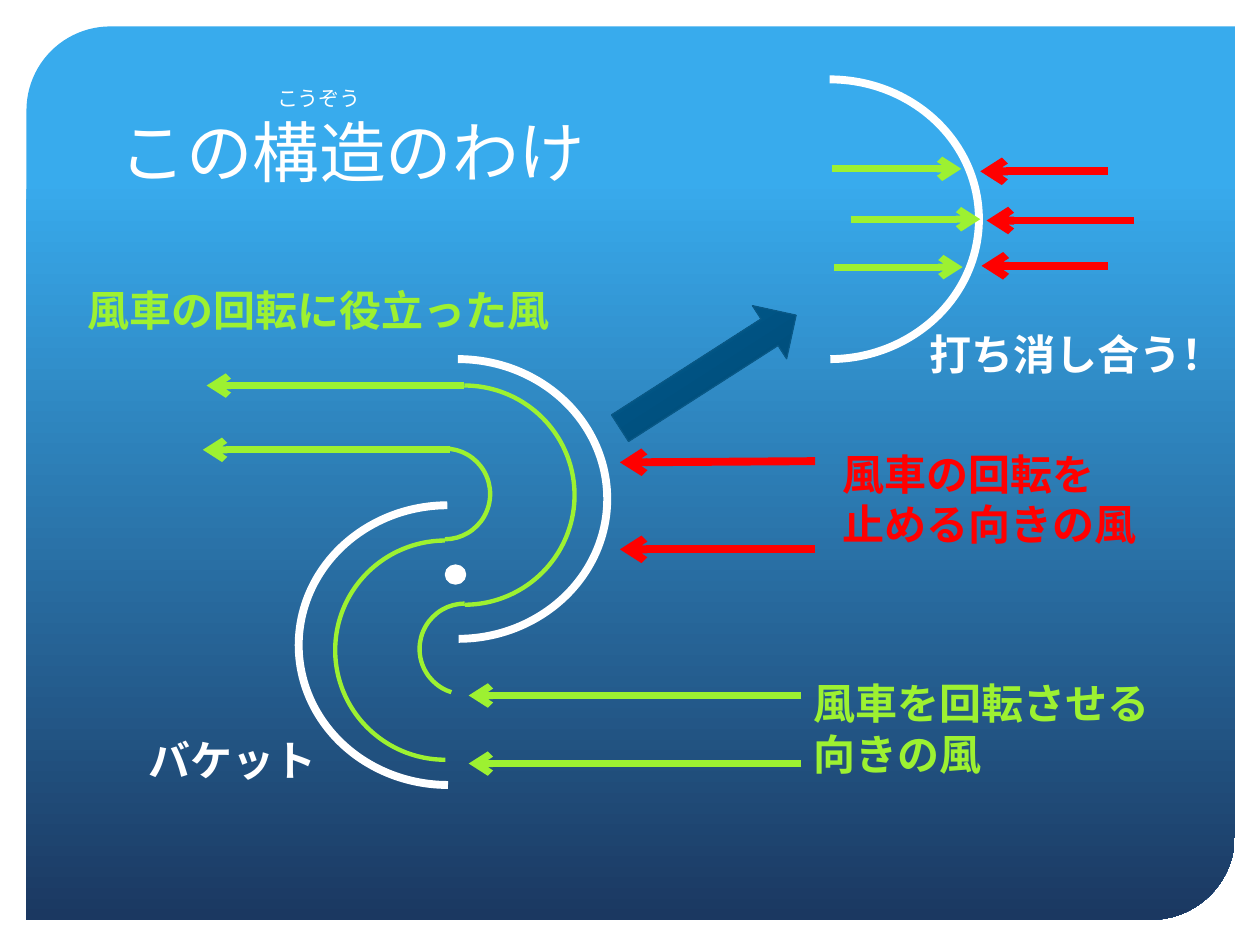
import pptx
import pptx.util
import pptx.dml.color
import pptx.enum.shapes
import pptx.enum.text
import pptx.oxml.ns
from lxml import etree
from pptx.util import Inches

SHAPE = pptx.enum.shapes.MSO_SHAPE
ANCHOR = pptx.enum.text.MSO_ANCHOR
FONT = "Karla"
WHITE, GREEN, RED = "FFFFFF", "9DF131", "FF0000"
BUCKET = (2.37, 2.22)


def color(hex_value):
    return pptx.dml.color.RGBColor.from_string(hex_value)


def set_line(sp, hex_value, width):
    sp.line.color.rgb = color(hex_value)
    sp.line.width = pptx.util.Pt(width)


def set_gradient(sp, stops, angle):
    sp.fill.gradient()
    sp.fill.gradient_angle = angle
    for stop, (position, hex_value) in zip(sp.fill.gradient_stops, stops):
        stop.position = position
        stop.color.rgb = color(hex_value)


def add_shape(slide, kind, x, y, w, h):
    sp = slide.shapes.add_shape(kind, Inches(x), Inches(y), Inches(w), Inches(h))
    sp.shadow.inherit = False
    return sp


def add_arc(slide, x, y, size, hex_value, width, rotation=0, start=162):
    """Draw about half a circle, open to the left unless rotated."""
    sp = add_shape(slide, SHAPE.ARC, x, y, *size)
    sp.adjustments[0] = start
    sp.adjustments[1] = 53.83
    sp.rotation = rotation
    sp.fill.background()
    set_line(sp, hex_value, width)


def add_wind(slide, x1, y1, x2, y2, hex_value):
    """Draw a wind arrow with its head at (x2, y2)."""
    line = slide.shapes.add_connector(
        pptx.enum.shapes.MSO_CONNECTOR.STRAIGHT,
        Inches(x1), Inches(y1), Inches(x2), Inches(y2))
    set_line(line, hex_value, 4.5 if hex_value == RED else 4)
    etree.SubElement(line.line._get_or_add_ln(),
                     pptx.oxml.ns.qn("a:tailEnd"), type="arrow")
    etree.SubElement(line._element.spPr, pptx.oxml.ns.qn("a:effectLst"))


def add_text(slide, x, y, w, h, text, hex_value, size=24, bold=True,
             anchor=ANCHOR.TOP):
    box = slide.shapes.add_textbox(Inches(x), Inches(y), Inches(w), Inches(h))
    tf = box.text_frame
    tf.word_wrap = True
    tf.vertical_anchor = anchor
    tf.text = text
    for p in tf.paragraphs:
        for r in p.runs:
            r.font.name = FONT
            r.font.size = pptx.util.Pt(size)
            r.font.bold = bold
            r.font.color.rgb = color(hex_value)


def add_background(slide, x, y, w, h):
    sp = add_shape(slide, SHAPE.ROUND_2_DIAG_RECTANGLE, x, y, w, h)
    sp.adjustments[0] = 0.094
    sp.adjustments[1] = 0
    set_gradient(sp, [(0.17, "38ABED"), (1, "1B3861")], 270)
    sp.line.fill.background()


def add_title(slide, x, y, w, h):
    add_text(slide, x, y, w, h, "この構造のわけ", WHITE, 38, False, ANCHOR.BOTTOM)
    add_text(slide, x + 1.25, y + 0.21, 1.95, 0.3, "こうぞう", WHITE, 12, False)


def add_windmill(slide, x, y):
    """Two facing buckets, the axle, the winds around them and their labels."""
    middle, inner = (1.75, 1.74), (0.72, 0.72)
    for dx, dy, size, hex_value, width, rotation, start in [
            (1.85, 0.64, BUCKET, WHITE, 4.5, 0, 162),
            (1.77, 1.80, BUCKET, WHITE, 4.5, 180, 162),
            (2.21, 0.85, middle, GREEN, 2.5, 0, 162),
            (2.06, 2.08, middle, GREEN, 2.5, 180, 162),
            (2.57, 1.35, inner, GREEN, 2.5, 0, 162),
            (2.73, 2.58, inner, GREEN, 2.5, 180, 172.45)]:
        add_arc(slide, x + dx, y + dy, size, hex_value, width, rotation, start)

    axle = add_shape(slide, SHAPE.OVAL, x + 2.94, y + 2.28, 0.15, 0.14)
    axle.fill.solid()
    axle.fill.fore_color.rgb = color(WHITE)
    set_line(axle, WHITE, 1.5)

    for x1, y1, x2, y2, hex_value in [
            (2.97, 1.36, 1.01, 1.36, GREEN), (3.08, 0.85, 1.04, 0.85, GREEN),
            (5.87, 1.45, 4.32, 1.46, RED), (5.87, 2.15, 4.32, 2.15, RED),
            (5.76, 3.31, 3.12, 3.31, GREEN), (5.76, 3.85, 3.12, 3.85, GREEN)]:
        add_wind(slide, x + x1, y + y1, x + x2, y + y2, hex_value)

    for dx, dy, w, h, text, hex_value in [
            (5.99, 1.30, 2.56, 0.91, "風車の回転を\n止める向きの風", RED),
            (5.76, 3.12, 2.94, 0.91, "風車を回転させる向きの風", GREEN),
            (0, 0, 4.13, 0.5, "風車の回転に役立った風", GREEN),
            (0.48, 3.57, 1.8, 0.5, "バケット", WHITE)]:
        add_text(slide, x + dx, y + dy, w, h, text, hex_value)


def add_cancelling_winds(slide, x, y):
    """One bucket with opposing winds on its two sides."""
    add_arc(slide, x, y, BUCKET, WHITE, 4.5)
    for x1, x2, dy, hex_value in [
            (1.20, 2.23, 0.71, GREEN), (1.35, 2.38, 1.11, GREEN),
            (1.22, 2.24, 1.49, GREEN), (3.39, 2.38, 0.73, RED),
            (3.60, 2.43, 1.12, RED), (3.39, 2.39, 1.48, RED)]:
        add_wind(slide, x + x1, y + dy, x + x2, y + dy, hex_value)
    add_text(slide, x + 1.88, y + 1.93, 2.56, 0.5, "打ち消し合う！", WHITE)


def add_zoom_arrow(slide, x, y, w, h):
    sp = add_shape(slide, SHAPE.RIGHT_ARROW, x, y, w, h)
    sp.rotation = 327.3
    set_gradient(sp, [(0, "00456D"), (0.8, "00598D")], 90)
    set_line(sp, "095886", 0.75)


def main():
    prs = pptx.Presentation()
    prs.slide_width, prs.slide_height = Inches(10), Inches(7.5)
    slide = prs.slides.add_slide(prs.slide_layouts[6])
    add_background(slide, 0.21, 0.21, 9.59, 7.09)
    add_title(slide, 0.85, 0.42, 8.29, 1.14)
    add_windmill(slide, 0.6, 2.21)
    add_cancelling_winds(slide, 5.4, 0.63)
    add_zoom_arrow(slide, 4.79, 2.7, 1.66, 0.5)
    prs.save("out.pptx")


if __name__ == "__main__":
    main()
